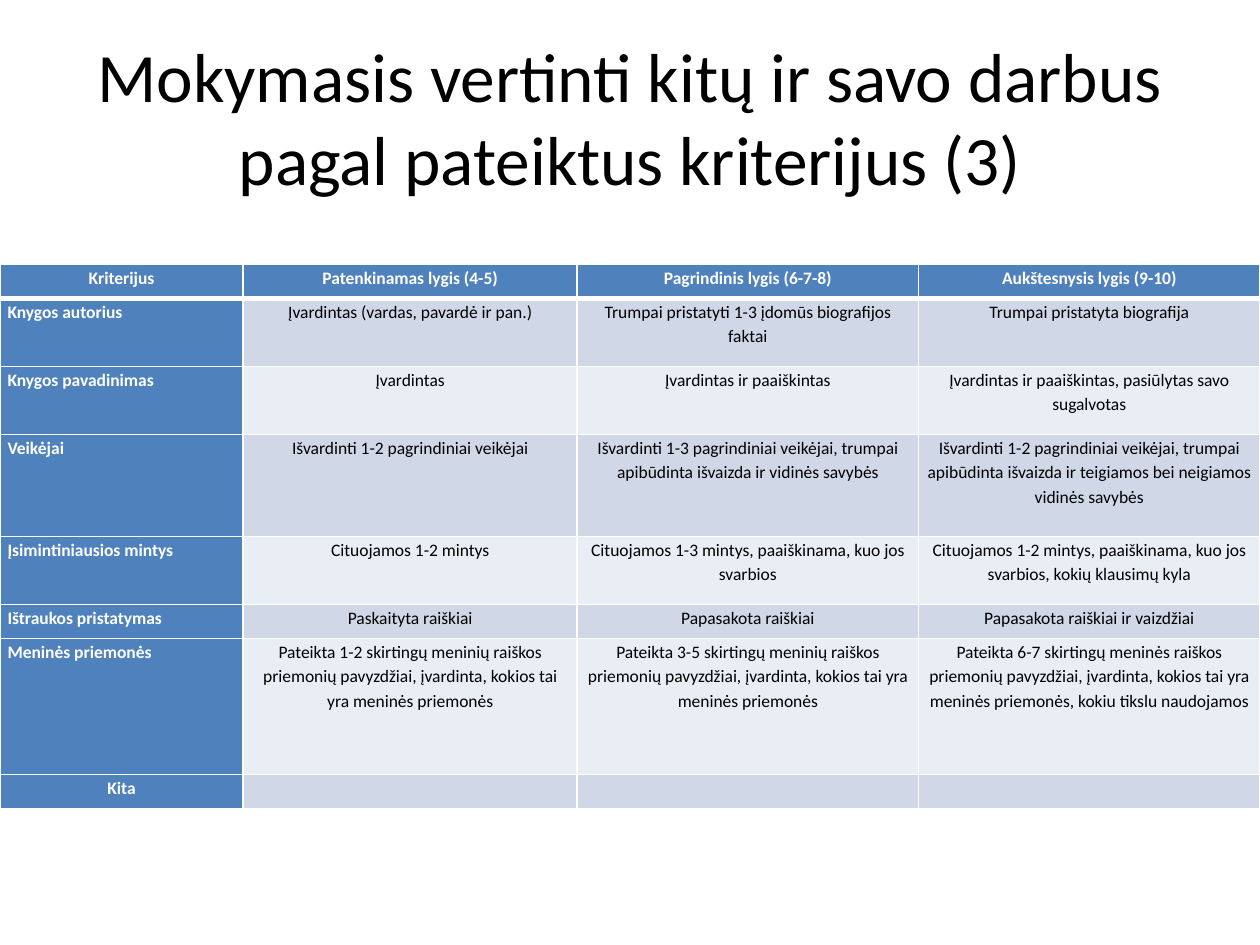
"""Build a slide with a table of criteria for judging book presentations."""
import pptx
import pptx.dml.color
import pptx.enum.text
import pptx.oxml.ns
import pptx.util
from lxml import etree

TITLE = "Mokymasis vertinti kitų ir savo darbus pagal pateiktus kriterijus (3)"
ROWS = [
    ("Kriterijus", "Patenkinamas lygis (4-5)", "Pagrindinis lygis (6-7-8)",
     "Aukštesnysis lygis (9-10)"),
    ("Knygos autorius", "Įvardintas (vardas, pavardė ir pan.)",
     "Trumpai pristatyti 1-3 įdomūs biografijos faktai",
     "Trumpai pristatyta biografija"),
    ("Knygos pavadinimas", "Įvardintas", "Įvardintas ir paaiškintas",
     "Įvardintas ir paaiškintas, pasiūlytas savo sugalvotas"),
    ("Veikėjai", "Išvardinti 1-2 pagrindiniai veikėjai",
     "Išvardinti 1-3 pagrindiniai veikėjai, trumpai apibūdinta išvaizda ir vidinės savybės",
     "Išvardinti 1-2 pagrindiniai veikėjai, trumpai apibūdinta išvaizda "
     "ir teigiamos bei neigiamos vidinės savybės"),
    ("Įsimintiniausios mintys", "Cituojamos 1-2 mintys",
     "Cituojamos 1-3 mintys, paaiškinama, kuo jos svarbios",
     "Cituojamos 1-2 mintys, paaiškinama, kuo jos svarbios, kokių klausimų kyla"),
    ("Ištraukos pristatymas", "Paskaityta raiškiai", "Papasakota raiškiai",
     "Papasakota raiškiai ir vaizdžiai"),
    ("Meninės priemonės",
     "Pateikta 1-2 skirtingų meninių raiškos priemonių pavyzdžiai, įvardinta, "
     "kokios tai yra meninės priemonės",
     "Pateikta 3-5 skirtingų meninių raiškos priemonių pavyzdžiai, įvardinta, "
     "kokios tai yra meninės priemonės",
     "Pateikta 6-7 skirtingų meninės raiškos priemonių pavyzdžiai, įvardinta, "
     "kokios tai yra meninės priemonės, kokiu tikslu naudojamos"),
    ("Kita", "", "", ""),
]
ROW_LINES = [1, 2, 2, 3, 2, 1, 4, 1]
LINE_HEIGHT = 0.27
COL_WIDTHS = [1.93, 2.65, 2.71, 2.71]
CENTERED_HEADS = ("Kriterijus", "Kita")
COLORS = {"head": "4F81BD", "odd": "D0D8E8", "even": "E9EDF4",
          "white": "FFFFFF", "black": "000000"}
FONT = "Calibri"
ALIGN = pptx.enum.text.PP_ALIGN
Inches, Pt = pptx.util.Inches, pptx.util.Pt


def rgb(name):
    return pptx.dml.color.RGBColor.from_string(COLORS[name])


def set_attrs(obj, values):
    for name, value in values.items():
        setattr(obj, name, value)


def write(p, text, size, color, bold=False, align=ALIGN.CENTER, spacing=1.0):
    set_attrs(p, {"alignment": align, "line_spacing": spacing})
    if text:
        r = p.add_run()
        r.text = text
        set_attrs(r.font, {"name": FONT, "size": Pt(size), "bold": bold})
        r.font.color.rgb = rgb(color)
    else:
        etree.SubElement(p._p, pptx.oxml.ns.qn("a:endParaRPr"), sz=str(size * 100))


def add_borders(cell, widths):
    tcPr = cell._tc.get_or_add_tcPr()
    for side, width in widths.items():
        ln = etree.SubElement(tcPr, pptx.oxml.ns.qn("a:ln" + side), w=str(Pt(width)))
        fill = etree.SubElement(ln, pptx.oxml.ns.qn("a:solidFill"))
        etree.SubElement(fill, pptx.oxml.ns.qn("a:srgbClr"), val=COLORS["white"])


def fill_cell(cell, text, row, col):
    head = row == 0 or col == 0
    left = col == 0 and text not in CENTERED_HEADS
    set_attrs(cell, {"margin_left": Inches(0.06), "margin_right": Inches(0.06),
                     "margin_top": 0, "margin_bottom": 0})
    add_borders(cell, {"L": 1, "R": 1, "T": 3 if row == 1 else 1,
                       "B": 3 if row == 0 else 1})
    cell.fill.solid()
    cell.fill.fore_color.rgb = rgb("head" if head else "odd" if row % 2 else "even")
    write(cell.text_frame.paragraphs[0], text, 10, "white" if head else "black",
          head, ALIGN.LEFT if left else ALIGN.CENTER, 1.15)


def main():
    prs = pptx.Presentation()
    set_attrs(prs, {"slide_width": Inches(10), "slide_height": Inches(7.5)})
    s = prs.slides.add_slide(prs.slide_layouts[5])

    title = s.shapes.title
    set_attrs(title, {"left": Inches(0.5), "top": Inches(0.3),
                      "width": Inches(9), "height": Inches(1.25)})
    tf = title.text_frame
    set_attrs(tf, {"word_wrap": True,
                   "auto_size": pptx.enum.text.MSO_AUTO_SIZE.NONE,
                   "vertical_anchor": pptx.enum.text.MSO_ANCHOR.MIDDLE})
    write(tf.paragraphs[0], TITLE, 39.6, "black")

    table = s.shapes.add_table(
        len(ROWS), len(COL_WIDTHS), 0, Inches(2.1), Inches(sum(COL_WIDTHS)),
        Inches(LINE_HEIGHT * sum(ROW_LINES))).table
    for column, width in zip(table.columns, COL_WIDTHS):
        column.width = Inches(width)
    for i, (lines, texts) in enumerate(zip(ROW_LINES, ROWS)):
        table.rows[i].height = Inches(LINE_HEIGHT * lines)
        for j, text in enumerate(texts):
            fill_cell(table.cell(i, j), text, i, j)

    prs.save("out.pptx")


if __name__ == "__main__":
    main()
